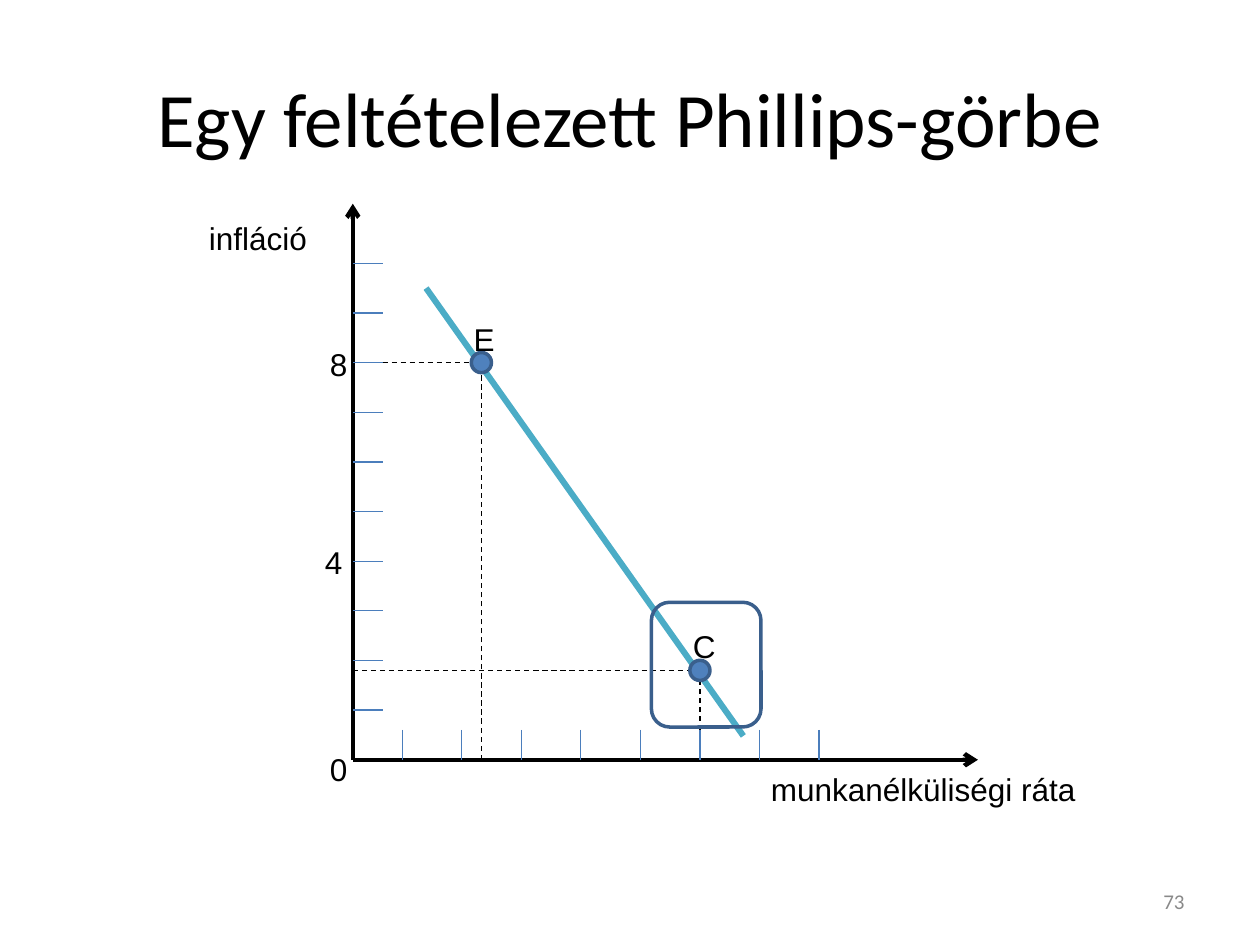
from dataclasses import dataclass

from lxml import etree
from pptx import Presentation
from pptx.dml.color import RGBColor
from pptx.enum import dml, shapes, text
from pptx.oxml import ns
from pptx.util import Emu, Inches, Pt

WIDTH, HEIGHT = Inches(10), Inches(7.5)

# Graph grid: one column per unemployment tick, one row per inflation point
COLUMN, ROW = Inches(0.4725), Inches(0.394)
GRID_LEFT, GRID_BOTTOM = Inches(2.72), Inches(6.03)
AXIS = 0.17
TICK_COLUMNS, TICK_ROWS = 0.5, 0.6

BLACK, TICK, CURVE = "000000", "4B7EBC", "4BACC6"
MARKER, OUTLINE, GREY = "4F81BD", "3A5F8C", "898989"


@dataclass
class Line:
    """A line between two (column, row) points of the graph grid."""
    start: tuple[float, float]
    end: tuple[float, float]
    color: str
    width: float = 0.75
    dashed: bool = False
    arrow: bool = False


@dataclass
class Label:
    """A text box; the lengths are percentages of the slide size."""
    wording: str
    left: float
    top: float
    width: float
    height: float = 5.33
    size: float = 18
    font: str = "Arial"
    color: str = BLACK
    align: text.PP_ALIGN = text.PP_ALIGN.LEFT
    anchor: text.MSO_ANCHOR = text.MSO_ANCHOR.TOP


def rgb(color: str) -> RGBColor:
    return RGBColor.from_string(color)


def grid_point(column: float, row: float) -> tuple[Emu, Emu]:
    return Emu(int(GRID_LEFT + column * COLUMN)), Emu(int(GRID_BOTTOM - row * ROW))


def slide_box(left: float, top: float, width: float, height: float) -> list[Emu]:
    shares = ((left, WIDTH), (top, HEIGHT), (width, WIDTH), (height, HEIGHT))
    return [Emu(int(share * full / 100)) for share, full in shares]


def format_text(shape, wording: str, size: float, font: str, color: str,
                align: text.PP_ALIGN, anchor: text.MSO_ANCHOR) -> None:
    frame = shape.text_frame
    frame.text = wording
    frame.word_wrap = True
    frame.vertical_anchor = anchor
    paragraph = frame.paragraphs[0]
    paragraph.alignment = align
    run_font = paragraph.runs[0].font
    for name, value in {"size": Pt(size), "name": font}.items():
        setattr(run_font, name, value)
    run_font.color.rgb = rgb(color)


def draw_line(slide, line: Line) -> None:
    connector = slide.shapes.add_connector(
        shapes.MSO_CONNECTOR.STRAIGHT, *grid_point(*line.start), *grid_point(*line.end))
    connector.line.color.rgb = rgb(line.color)
    connector.line.width = Pt(line.width)
    if line.dashed:
        connector.line.dash_style = dml.MSO_LINE.DASH
    if line.arrow:
        etree.SubElement(connector.line._get_or_add_ln(), ns.qn("a:tailEnd"), type="arrow")
    etree.SubElement(connector._element.spPr, ns.qn("a:effectLst"))


def draw_label(slide, label: Label) -> None:
    box = slide.shapes.add_textbox(
        *slide_box(label.left, label.top, label.width, label.height))
    format_text(box, label.wording, label.size, label.font, label.color,
                label.align, label.anchor)


def draw_shape(slide, kind: shapes.MSO_SHAPE, box: list[Emu], fill: str | None) -> None:
    shape = slide.shapes.add_shape(kind, *box)
    shape.shadow.inherit = False
    if fill:
        shape.fill.solid()
        shape.fill.fore_color.rgb = rgb(fill)
    else:
        shape.fill.background()
    shape.line.color.rgb = rgb(OUTLINE)
    shape.line.width = Pt(2)


def draw_marker(slide, column: float, row: float) -> None:
    size = Inches(0.16)
    x, y = grid_point(column, row)
    draw_shape(slide, shapes.MSO_SHAPE.OVAL,
               [Emu(x - size // 2), Emu(y - size // 2), size, size], MARKER)


def main() -> None:
    presentation = Presentation()
    presentation.slide_width, presentation.slide_height = WIDTH, HEIGHT
    slide = presentation.slides.add_slide(presentation.slide_layouts[5])

    # Title
    title = slide.shapes.title
    places = slide_box(5, 4, 90, 16.67)
    for name, value in zip(("left", "top", "width", "height"), places):
        setattr(title, name, value)
    format_text(title, "Egy feltételezett Phillips-görbe", 44, "Calibri", BLACK,
                text.PP_ALIGN.CENTER, text.MSO_ANCHOR.MIDDLE)

    # Axes, curve, ticks and guides to the two points
    point_e, point_c = (2.33, 8), (6, 1.8)
    lines = [
        Line((AXIS, 0), (10.67, 0), BLACK, 2.5, arrow=True),
        Line((AXIS, 0), (AXIS, 11.2), BLACK, 2.5, arrow=True),
        Line((1.4, 9.5), (6.73, 0.48), CURVE, 3.5),
    ]
    lines += [Line((AXIS, row), (AXIS + TICK_COLUMNS, row), TICK) for row in range(1, 11)]
    lines += [Line((column, TICK_ROWS), (column, 0), TICK) for column in range(1, 9)]
    lines += [
        Line((point_c[0], TICK_ROWS), point_c, BLACK, dashed=True),
        Line((AXIS, point_c[1]), point_c, BLACK, dashed=True),
        Line((AXIS + TICK_COLUMNS, point_e[1]), point_e, BLACK, dashed=True),
        Line((point_e[0], 0), point_e, BLACK, dashed=True),
    ]
    for line in lines:
        draw_line(slide, line)

    # Points
    for point in (point_e, point_c):
        draw_marker(slide, *point)

    # Labels and slide number
    labels = [
        Label("munkanélküliségi ráta", 60.2, 80.8, 26.8),
        Label("infláció", 15.6, 22.53, 15.7),
        Label("C", 54, 65.73, 6.3),
        Label("E", 36.6, 33.2, 3.1),
        Label("4", 24.8, 56.8, 2.4),
        Label("8", 25.2, 35.87, 2),
        Label("0", 25.2, 78.67, 5.5),
        Label("73", 71.7, 92.67, 23.3, size=12, font="Calibri", color=GREY,
              align=text.PP_ALIGN.RIGHT, anchor=text.MSO_ANCHOR.MIDDLE),
    ]
    for label in labels:
        draw_label(slide, label)

    # Frame around point C
    draw_shape(slide, shapes.MSO_SHAPE.ROUNDED_RECTANGLE,
               slide_box(51.7, 63.73, 8.7, 13.2), None)

    presentation.save("out.pptx")


if __name__ == "__main__":
    main()
